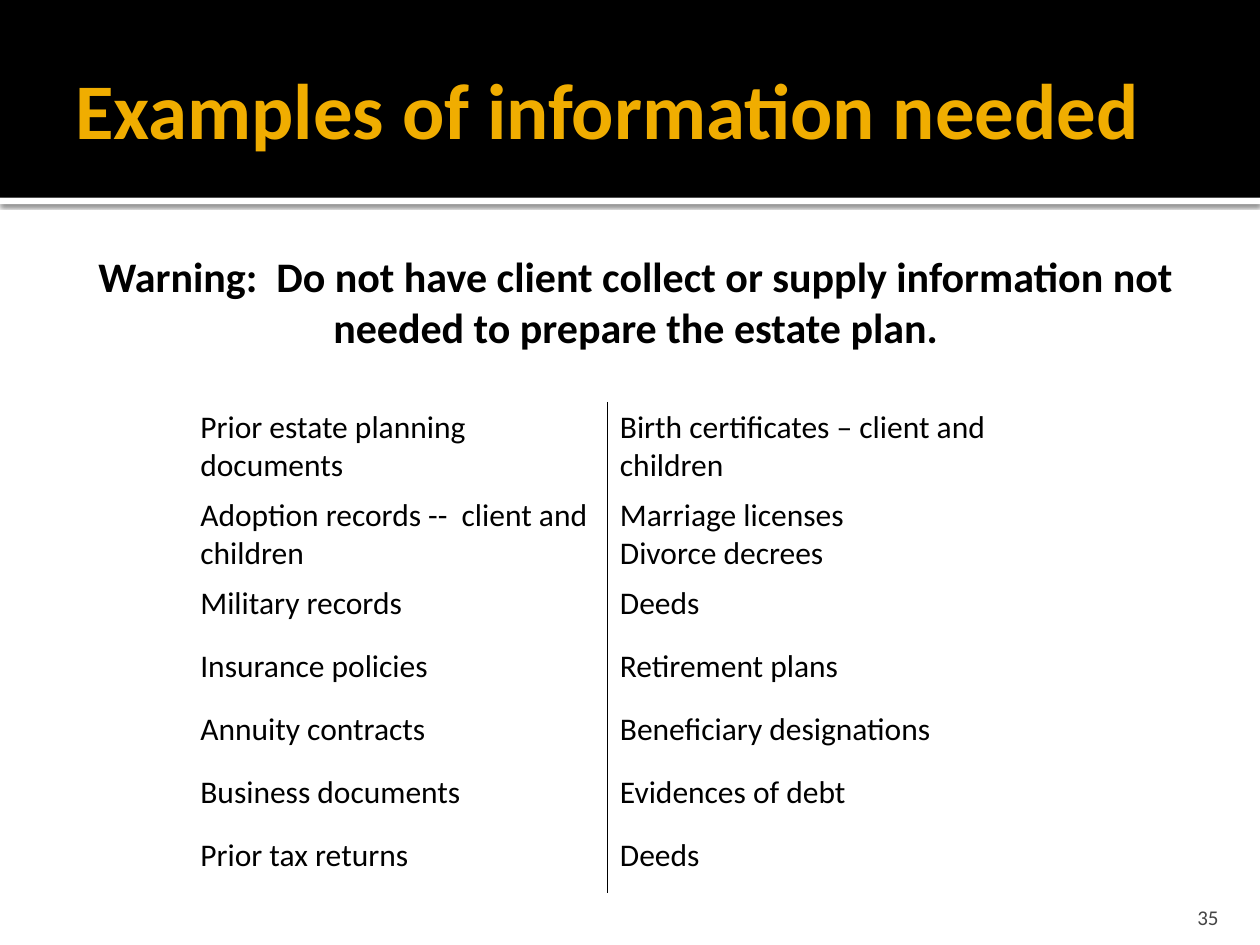
from lxml.etree import SubElement
from pptx import Presentation
from pptx.dml.color import RGBColor
from pptx.enum.shapes import MSO_SHAPE as Preset
from pptx.enum.text import MSO_ANCHOR as Anchor, MSO_AUTO_SIZE as AutoSize, PP_ALIGN as Align
from pptx.oxml import parse_xml
from pptx.oxml.ns import nsdecls, qn
from pptx.util import Inches, Pt

BLACK, WHITE, GOLD, GREY = "000000", "FFFFFF", "F0AD00", "454545"
NO_STYLE = "{2D5ABB26-0587-4C30-8999-92F81FD0307C}"


def color(code):
    return RGBColor.from_string(code)


def write(frame, text, size, code, bold=False, align=Align.LEFT, **layout):
    """Fill a text frame; layout holds frame settings such as margins and anchor."""
    frame.text = text
    for name, value in layout.items():
        setattr(frame, name, value)
    for para in frame.paragraphs:
        para.alignment = align
        for span in para.runs:
            for name, value in {"name": "Calibri", "size": Pt(size), "bold": bold}.items():
                setattr(span.font, name, value)
            span.font.color.rgb = color(code)


deck = Presentation()
deck.slide_width, deck.slide_height = Inches(10), Inches(7.5)
page = deck.slides.add_slide(deck.slide_layouts[5])
shapes = page.shapes
title = shapes.title

# Header: white strip with a soft shadow, then the black band
band_height, strip_height = Inches(1.57), Inches(0.05)
for top, height, fill in ((band_height, strip_height, WHITE), (0, band_height, BLACK)):
    band = shapes.add_shape(Preset.RECTANGLE, 0, top, deck.slide_width, height)
    band.shadow.inherit = False
    band.fill.solid()
    band.fill.fore_color.rgb = color(fill)
    band.line.fill.background()
    if fill == WHITE:
        effects = band._element.spPr.find(qn("a:effectLst"))
        shadow = SubElement(effects, qn("a:outerShdw"), blurRad=str(Pt(2.5)),
                            dist=str(Pt(0.8)), dir="5400000", algn="tl", rotWithShape="0")
        tint = SubElement(shadow, qn("a:srgbClr"), val=BLACK)
        SubElement(tint, qn("a:alpha"), val="60000")

# Title in front of the band
shapes._spTree.append(title._element)
margin, content_width = Inches(0.5), Inches(9)
title.left, title.top, title.width, title.height = margin, Inches(0.17), content_width, Inches(1.37)
write(title.text_frame, "Examples of information needed", 45, GOLD, bold=True,
      vertical_anchor=Anchor.MIDDLE, auto_size=AutoSize.NONE, word_wrap=True,
      margin_left=Inches(0.1), margin_right=Inches(0.05))

warning = shapes.add_textbox(margin, Inches(1.89), content_width, Inches(1.16))
write(warning.text_frame,
      "Warning:  Do not have client collect or supply information not needed to prepare the estate plan.",
      24, BLACK, bold=True, align=Align.CENTER, word_wrap=True,
      margin_left=Inches(0.19), margin_top=Inches(0.1))

number = shapes.add_textbox(Inches(8.97), Inches(7.08), Inches(0.8), Inches(0.3))
write(number.text_frame, "35", 12, GREY, align=Align.RIGHT, word_wrap=True,
      vertical_anchor=Anchor.BOTTOM, margin_bottom=0)

# Two columns of documents with one line between them
documents = [
    ("Prior estate planning documents", "Birth certificates – client and children"),
    ("Adoption records --  client and children", "Marriage licenses\vDivorce decrees"),
    ("Military records", "Deeds"),
    ("Insurance policies", "Retirement plans"),
    ("Annuity contracts", "Beneficiary designations"),
    ("Business documents", "Evidences of debt"),
    ("Prior tax returns", "Deeds"),
]
row_height, column_width = Inches(0.5), Inches(3.33)
holder = shapes.add_table(len(documents), 2, Inches(1.49), Inches(3.19),
                          2 * column_width, len(documents) * row_height)
table = holder.table
table.first_row = table.horz_banding = False
table._tbl.tblPr.find(qn("a:tableStyleId")).text = NO_STYLE

for row, entries in enumerate(documents):
    for column, (entry, side) in enumerate(zip(entries, ("lnR", "lnL"))):
        cell = table.cell(row, column)
        write(cell.text_frame, entry, 18, BLACK)
        cell.fill.background()
        cell._tc.get_or_add_tcPr().insert(0, parse_xml(
            f'<a:{side} {nsdecls("a")} w="{Pt(1)}"><a:solidFill>'
            f'<a:srgbClr val="{BLACK}"/></a:solidFill></a:{side}>'))

deck.save("out.pptx")
